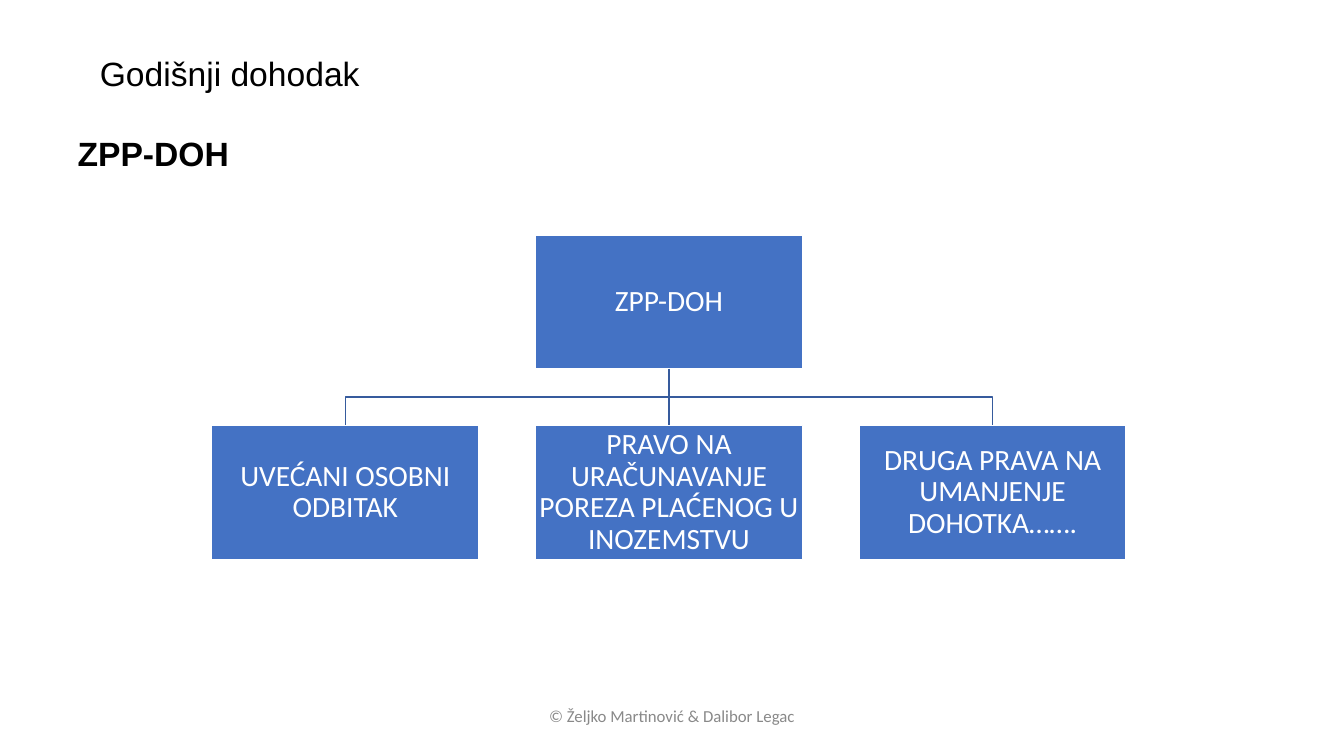
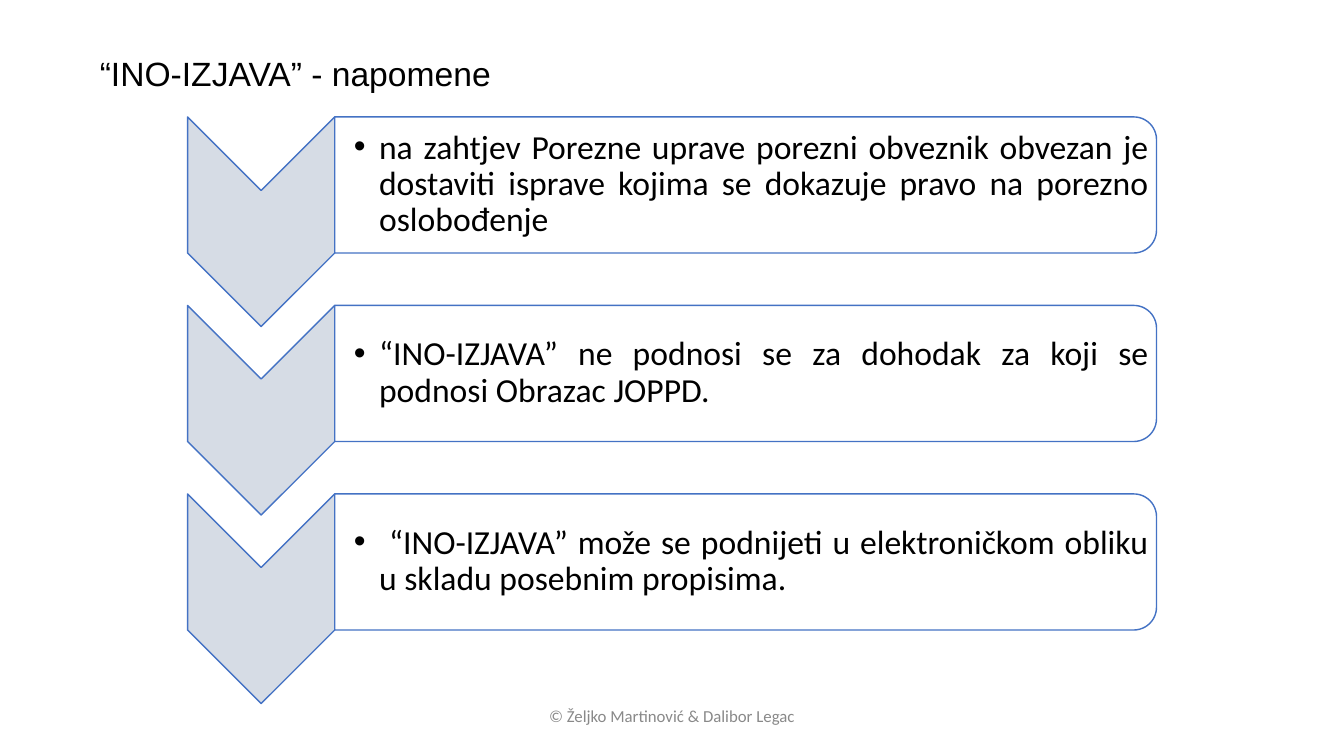
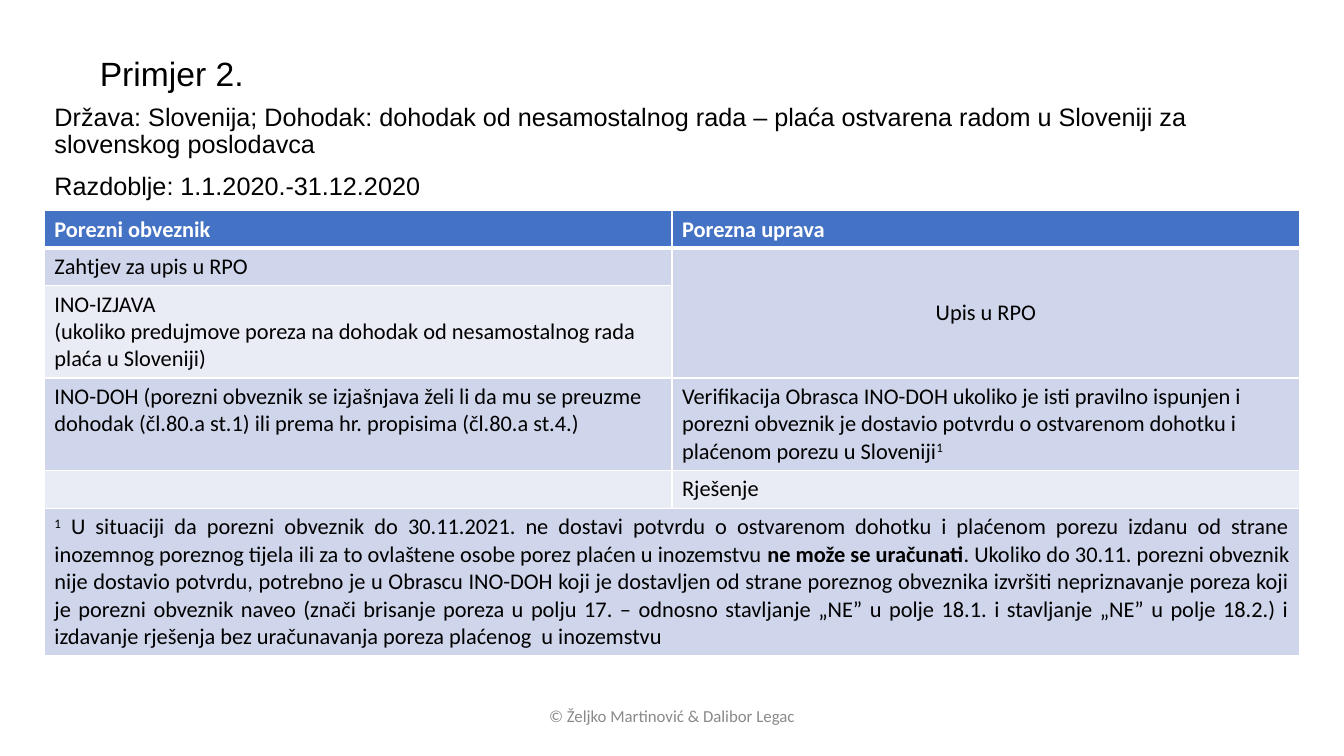
from dataclasses import dataclass

from lxml.etree import SubElement
from pptx import Presentation
from pptx.dml.color import RGBColor
from pptx.enum.shapes import MSO_CONNECTOR, MSO_SHAPE as Preset
from pptx.enum.text import MSO_ANCHOR as Anchor, MSO_AUTO_SIZE as AutoSize, PP_ALIGN as Align
from pptx.oxml.ns import qn
from pptx.util import Inches, Pt


@dataclass(frozen=True)
class Theme:
    # Colours
    black: str = "000000"
    white: str = "FFFFFF"
    accent: str = "4472C4"
    branch: str = "365B9D"
    chevron: str = "D6DCE5"
    band_dark: str = "CFD5EA"
    band_light: str = "E9EBF5"
    muted: str = "898989"
    # Fonts and type sizes
    heading_font: str = "Arial"
    body_font: str = "Calibri"
    title_size: int = 24
    box_size: int = 21
    lead_size: int = 18
    table_size: int = 16
    footer_size: int = 12


THEME = Theme()
FOOTER = "© Željko Martinović & Dalibor Legac"


def write(frame, paragraphs, *, size, font=THEME.body_font, color=THEME.black, bold=False,
          align=Align.LEFT, anchor=Anchor.TOP, spacing=1.0, before=0, bullet=None,
          indent=0, margins=None):
    """Fill a text frame; a paragraph is a string or a list of (text, style) runs."""
    frame.word_wrap = True
    frame.auto_size = AutoSize.NONE
    frame.vertical_anchor = anchor
    if margins:
        (frame.margin_left, frame.margin_top,
         frame.margin_right, frame.margin_bottom) = map(Inches, margins)
    for number, content in enumerate(paragraphs):
        paragraph = frame.paragraphs[0] if number == 0 else frame.add_paragraph()
        paragraph.alignment = align
        paragraph.line_spacing = spacing
        paragraph.space_before = Pt(before)
        paragraph.space_after = Pt(0)
        props = paragraph._p.get_or_add_pPr()
        props.set("marL", str(Inches(indent)))
        props.set("indent", str(-Inches(indent)))
        if bullet:
            SubElement(props, qn("a:buFont"), typeface="Arial")
            SubElement(props, qn("a:buChar"), char=bullet)
        else:
            SubElement(props, qn("a:buNone"))
        for text, style in [(content, "")] if isinstance(content, str) else content:
            run = paragraph.add_run()
            run.text = text
            run.font.size = Pt(size)
            run.font.name = font
            run.font.bold = bold or style == "bold"
            run.font.color.rgb = RGBColor.from_string(color)
            if style == "super":
                run._r.get_or_add_rPr().set("baseline", "30000")


class Deck:
    """Holds the presentation, its theme and the slide being built."""

    def __init__(self, theme):
        self.theme = theme
        self.file = Presentation()
        self.file.slide_width = Inches(13.33)
        self.file.slide_height = Inches(7.5)
        self.slide = None

    def new_slide(self, title, with_body=False):
        layout = self.file.slide_layouts[1 if with_body else 5]
        self.slide = self.file.slides.add_slide(layout)
        self.fill_placeholder(0, (0.89, 0.52, 7.98, 0.47), [title], size=self.theme.title_size)
        self.text((5.08, 6.95, 3.17, 0.4), [FOOTER], size=self.theme.footer_size,
                  color=self.theme.muted, align=Align.CENTER)

    def fill_placeholder(self, index, at, paragraphs, **style):
        holder = self.slide.placeholders[index]
        holder.left, holder.top, holder.width, holder.height = map(Inches, at)
        write(holder.text_frame, paragraphs, font=self.theme.heading_font,
              spacing=0.9, before=10, **style)

    def text(self, at, paragraphs, **style):
        box = self.slide.shapes.add_textbox(*map(Inches, at))
        write(box.text_frame, paragraphs, **style)

    def shape(self, preset, at, fill, line, rotation=0):
        shape = self.slide.shapes.add_shape(preset, *map(Inches, at))
        shape.shadow.inherit = False
        shape.rotation = rotation
        shape.fill.solid()
        shape.fill.fore_color.rgb = RGBColor.from_string(fill)
        self.outline(shape, line)
        return shape

    def outline(self, part, color):
        part.line.color.rgb = RGBColor.from_string(color)
        part.line.width = Pt(1)

    def org_box(self, left, top, width, height, label):
        box = self.shape(Preset.RECTANGLE, (left, top, width, height),
                         self.theme.accent, self.theme.white)
        write(box.text_frame, [label], size=self.theme.box_size, color=self.theme.white,
              align=Align.CENTER, anchor=Anchor.MIDDLE, spacing=0.9, margins=(0.01,) * 4)
        return box

    def trunk(self, x, top, bottom, parent, child):
        """Join a parent's bottom to the top of the child right below it."""
        trunk = self.slide.shapes.add_connector(
            MSO_CONNECTOR.STRAIGHT, *map(Inches, (x, top, x, bottom)))
        self.outline(trunk, self.theme.branch)
        SubElement(trunk._element.spPr, qn("a:effectLst"))
        trunk.begin_connect(parent, 2)
        trunk.end_connect(child, 0)

    def branch(self, points):
        """Draw an open line with corners."""
        start, *corners = [tuple(map(Inches, point)) for point in points]
        builder = self.slide.shapes.build_freeform(*start)
        builder.add_line_segments(corners, close=False)
        branch = builder.convert_to_shape()
        branch.shadow.inherit = False
        branch.fill.background()
        self.outline(branch, self.theme.branch)

    def chevron_row(self, top, note):
        self.shape(Preset.CHEVRON, (1.55, top + 0.31, 2.08, 1.46),
                   self.theme.chevron, self.theme.accent, rotation=90)
        self.shape(Preset.ROUND_2_SAME_RECTANGLE, (6.72, top - 3.4, 1.35, 8.15),
                   self.theme.white, self.theme.accent, rotation=90)
        self.text((3.32, top + 0.06, 8.09, 1.22), [note], size=self.theme.title_size,
                  align=Align.JUSTIFY, anchor=Anchor.MIDDLE, spacing=0.9, bullet="•",
                  indent=0.25, margins=(0.19, 0.02, 0.02, 0.02))

    def table(self, at, heights, rows, merges, formats):
        left, top, width = at
        table = self.slide.shapes.add_table(
            len(rows), len(rows[0]), *map(Inches, (left, top, width, sum(heights)))).table
        for row, height in zip(table.rows, heights):
            row.height = Inches(height)
        for first, last in merges:
            table.cell(*first).merge(table.cell(*last))
        for r, row in enumerate(rows):
            for c, paragraphs in enumerate(row):
                cell = table.cell(r, c)
                self.cell_look(cell, r)
                if not cell.is_spanned:
                    style = {"color": self.theme.white, "bold": True} if r == 0 else {}
                    style.update(formats.get((r, c), {}))
                    anchor = style.pop("anchor", Anchor.TOP)
                    write(cell.text_frame, paragraphs, size=self.theme.table_size, **style)
                    cell.vertical_anchor = anchor

    def cell_look(self, cell, row):
        props = cell._tc.get_or_add_tcPr()
        for side in ("lnL", "lnR", "lnT", "lnB"):
            thick = (row == 0 and side == "lnB") or (row == 1 and side == "lnT")
            border = SubElement(props, qn(f"a:{side}"), w=str(Pt(3 if thick else 1)))
            SubElement(SubElement(border, qn("a:solidFill")), qn("a:srgbClr"),
                       val=self.theme.white)
        bands = (self.theme.band_light, self.theme.band_dark)
        cell.fill.solid()
        cell.fill.fore_color.rgb = RGBColor.from_string(
            self.theme.accent if row == 0 else bands[row % 2])


def income_slide(deck):
    deck.new_slide("Godišnji dohodak", with_body=True)
    deck.fill_placeholder(1, (0.67, 1.31, 12, 5.39), ["ZPP-DOH"],
                          size=deck.theme.title_size, bold=True)
    # Organisation chart
    width, height, pitch = 2.65, 1.33, 3.21
    first_left, root_top, child_top = 2.1, 2.33, 4.22
    root = deck.org_box(first_left + pitch, root_top, width, height, "ZPP-DOH")
    labels = ("UVEĆANI OSOBNI ODBITAK",
              "PRAVO NA URAČUNAVANJE POREZA PLAĆENOG U INOZEMSTVU",
              "DRUGA PRAVA NA UMANJENJE DOHOTKA…….")
    rights = [deck.org_box(first_left + i * pitch, child_top, width, height, label)
              for i, label in enumerate(labels)]
    # Branches: a straight trunk and a cornered line to each side
    left, middle, right = (first_left + width / 2 + i * pitch for i in range(3))
    root_bottom = root_top + height
    bend = (root_bottom + child_top) / 2
    deck.trunk(middle, root_bottom, child_top, root, rights[1])
    for x in (left, right):
        deck.branch([(middle, root_bottom), (middle, bend), (x, bend), (x, child_top)])


def notes_slide(deck):
    deck.new_slide("“INO-IZJAVA” - napomene")
    notes = ("na zahtjev Porezne uprave porezni obveznik obvezan je dostaviti isprave "
             "kojima se dokazuje pravo na porezno oslobođenje",
             "“INO-IZJAVA” ne podnosi se za dohodak za koji se podnosi Obrazac JOPPD.",
             " “INO-IZJAVA” može se podnijeti u elektroničkom obliku u skladu posebnim "
             "propisima.")
    for i, note in enumerate(notes):
        deck.chevron_row(1.16 + i * 1.87, note)


def example_slide(deck):
    deck.new_slide("Primjer 2.", with_body=True)
    deck.fill_placeholder(1, (0.44, 0.99, 12.45, 5.39), [
        "Država: Slovenija; Dohodak: dohodak od nesamostalnog rada – plaća ostvarena "
        "radom u Sloveniji za slovenskog poslodavca",
        "Razdoblje: 1.1.2020.-31.12.2020"], size=deck.theme.lead_size)
    # Steps of the taxpayer and of the tax office
    footnote = [
        ("1", "super"),
        (" U situaciji da porezni obveznik do 30.11.2021. ne dostavi potvrdu o ostvarenom "
         "dohotku i plaćenom porezu izdanu od strane inozemnog poreznog tijela ili za to "
         "ovlaštene osobe porez plaćen u inozemstvu ", ""),
        ("ne može se uračunati", "bold"),
        (". Ukoliko do 30.11. porezni obveznik nije dostavio potvrdu, potrebno je u Obrascu "
         "INO-DOH koji je dostavljen od strane poreznog obveznika izvršiti nepriznavanje "
         "poreza koji je porezni obveznik naveo (znači brisanje poreza u polju 17. – odnosno "
         "stavljanje „NE” u polje 18.1. i stavljanje „NE” u polje 18.2.) i izdavanje rješenja "
         "bez uračunavanja poreza plaćenog  u inozemstvu", "")]
    verification = [
        ("Verifikacija Obrasca INO-DOH ukoliko je isti pravilno ispunjen i porezni obveznik "
         "je dostavio potvrdu o ostvarenom dohotku i plaćenom porezu u Sloveniji", ""),
        ("1", "super")]
    steps = [
        (["Porezni obveznik"], ["Porezna uprava"]),
        (["Zahtjev za upis u RPO"], ["Upis u RPO"]),
        (["INO-IZJAVA", "(ukoliko predujmove poreza na dohodak od nesamostalnog rada plaća "
          "u Sloveniji)"], []),
        (["INO-DOH (porezni obveznik se izjašnjava želi li da mu se preuzme dohodak "
          "(čl.80.a st.1) ili prema hr. propisima (čl.80.a st.4.)"], [verification]),
        ([""], ["Rješenje"]),
        ([footnote], [])]
    deck.table((0.44, 2.09, 12.45), (0.37, 0.37, 0.91, 0.91, 0.37, 1.46), steps,
               merges=[((1, 1), (2, 1)), ((5, 0), (5, 1))],
               formats={(1, 1): {"align": Align.CENTER, "anchor": Anchor.MIDDLE},
                        (5, 0): {"align": Align.JUSTIFY}})


def main():
    deck = Deck(THEME)
    income_slide(deck)
    notes_slide(deck)
    example_slide(deck)
    deck.file.save("out.pptx")


if __name__ == "__main__":
    main()
